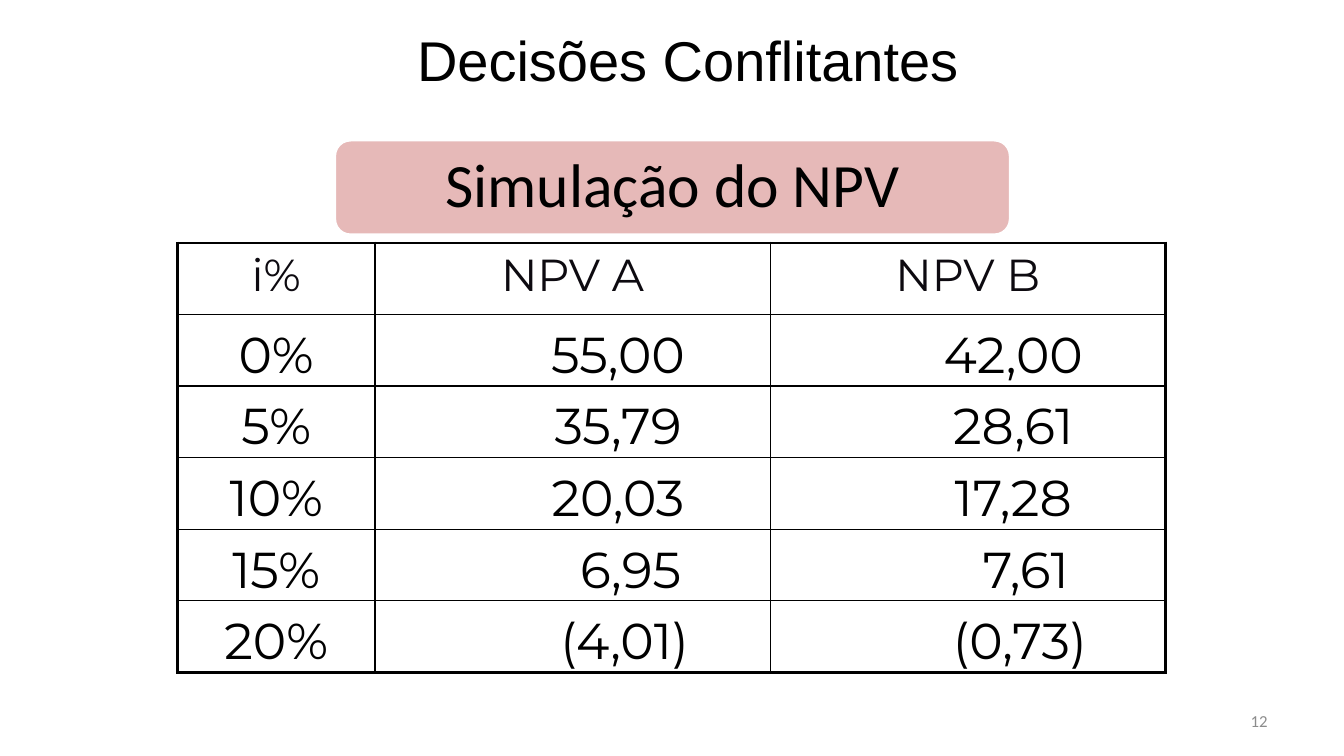
from lxml.etree import SubElement
from pptx import Presentation
from pptx.dml.color import RGBColor
from pptx.enum.shapes import MSO_SHAPE
from pptx.enum.text import MSO_ANCHOR, PP_ALIGN
from pptx.oxml.ns import qn
from pptx.util import Inches, Pt

TITLE = "Decisões Conflitantes"
BANNER = "Simulação do NPV"
PAGE = "12"
HEAD = ["i%", "NPV A", "NPV B"]
ROWS = [
    ("0%", "55,00", "42,00", 0.91),
    ("5%", "35,79", "28,61", 0.91),
    ("10%", "20,03", "17,28", 0.91),
    ("15%", "6,95", "7,61", 1.16),
    ("20%", "(4,01)", "(0,73)", 1.04),
]
WIDTHS = [1.96, 3.92, 3.92]
ROW_H = 0.71
THIN, THICK = 1, 2.25
COLORS = {"ink": "000000", "head": "0D0A10", "rose": "E6B9B8",
          "white": "FFFFFF", "gray": "8C8C8C"}


def color(name):
    return RGBColor.from_string(COLORS[name])


def write(frame, text, size, font, ink="ink", align=PP_ALIGN.CENTER, space=1):
    frame.word_wrap = True
    para = frame.paragraphs[0]
    para.alignment = align
    para.line_spacing = space
    run = para.add_run()
    run.text = text
    run.font.size = Pt(size)
    run.font.name = font
    run.font.color.rgb = color(ink)


def inset(item, left, top, right, bottom):
    item.margin_left, item.margin_top = Inches(left), Inches(top)
    item.margin_right, item.margin_bottom = Inches(right), Inches(bottom)


def add_box(slide, left, top, width, height):
    box = slide.shapes.add_textbox(*map(Inches, (left, top, width, height)))
    box.text_frame.vertical_anchor = MSO_ANCHOR.MIDDLE
    return box.text_frame


def set_edges(cell, row, col):
    outer = {"L": col == 0, "R": col == len(HEAD) - 1,
             "T": row == 0, "B": row == len(ROWS)}
    props = cell._tc.get_or_add_tcPr()
    for side, thick in outer.items():
        width = Pt(THICK if thick else THIN)
        line = SubElement(props, qn(f"a:ln{side}"), w=str(width))
        fill = SubElement(line, qn("a:solidFill"))
        SubElement(fill, qn("a:srgbClr"), val=COLORS["ink"])


def add_grid(slide):
    shape = slide.shapes.add_table(
        len(ROWS) + 1, len(HEAD), Inches(1.76), Inches(2.41),
        Inches(sum(WIDTHS)), Inches(ROW_H * (len(ROWS) + 1)))
    table = shape.table
    table.first_row = table.horz_banding = False
    for col, width in enumerate(WIDTHS):
        table.columns[col].width = Inches(width)
    for row in table.rows:
        row.height = Inches(ROW_H)

    for col, name in enumerate(HEAD):
        cell = table.cell(0, col)
        inset(cell, 0.13, 0.05, 0.13, 0.05)
        write(cell.text_frame, name, 32, "Montserrat", ink="head")
    for row, (*texts, shift) in enumerate(ROWS, 1):
        for col, text in enumerate(texts):
            cell = table.cell(row, col)
            inset(cell, shift if col else 0.01, 0.01, 0.01, 0)
            cell.vertical_anchor = MSO_ANCHOR.BOTTOM
            write(cell.text_frame, text, 36, "Montserrat")

    for row in range(len(ROWS) + 1):
        for col in range(len(HEAD)):
            cell = table.cell(row, col)
            set_edges(cell, row, col)
            cell.fill.background()


def main():
    deck = Presentation()
    deck.slide_width, deck.slide_height = Inches(13.33), Inches(7.5)
    slide = deck.slides.add_slide(deck.slide_layouts[6])

    title = add_box(slide, 2, 0, 9.33, 1.18)
    inset(title, 0.41, 0.05, 0.1, 0.05)
    write(title, TITLE, 40, "Arial")

    banner = slide.shapes.add_shape(
        MSO_SHAPE.ROUNDED_RECTANGLE, *map(Inches, (3.32, 1.39, 6.7, 0.94)))
    banner.shadow.inherit = False
    banner.fill.solid()
    banner.fill.fore_color.rgb = color("rose")
    banner.line.color.rgb = color("white")
    banner.line.width = Pt(2)
    frame = banner.text_frame
    inset(frame, 0.18, 0.18, 0.18, 0.18)
    frame.vertical_anchor = MSO_ANCHOR.MIDDLE
    write(frame, BANNER, 44, "Calibri", space=0.9)

    add_grid(slide)

    page = add_box(slide, 9.56, 6.95, 3.11, 0.4)
    write(page, PAGE, 12, "Calibri", ink="gray", align=PP_ALIGN.RIGHT)
    deck.save("out.pptx")


if __name__ == "__main__":
    main()
